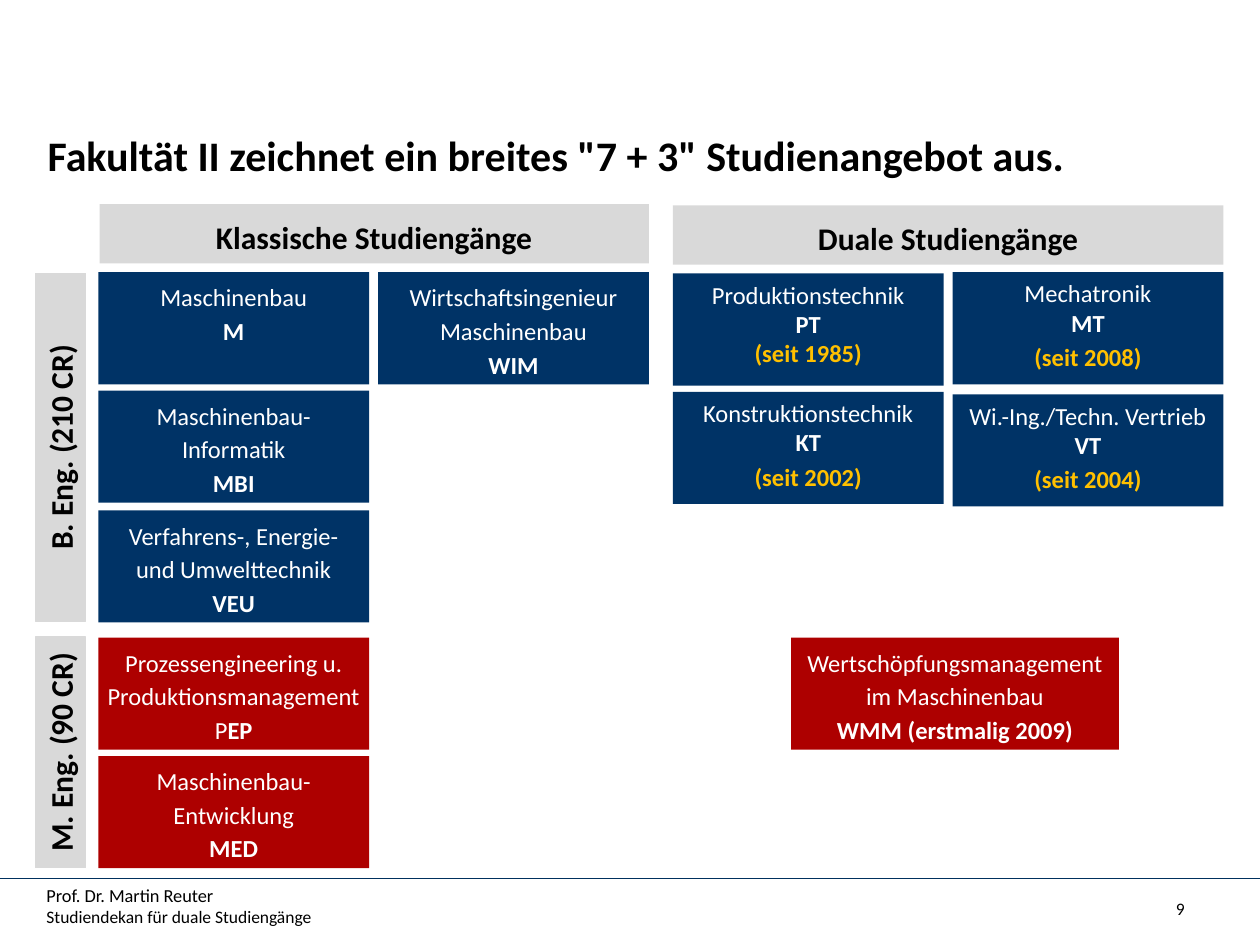
from lxml import etree
from pptx import Presentation
from pptx.dml.color import RGBColor
from pptx.enum.shapes import MSO_CONNECTOR, MSO_SHAPE
from pptx.enum.text import MSO_ANCHOR, PP_ALIGN
from pptx.oxml.ns import qn
from pptx.util import Inches, Pt

COLORS = {"bachelor": "003366", "master": "AD0000", "label": "D9D9D9", "rule": "00305D",
          "black": "000000", "white": "FFFFFF", "since": "FFC000"}
FONT = "Calibri"
COURSE_W, COURSE_H = 2.15, 0.89
COLUMNS = [0.78, 3.0, 5.34, 7.56]
WMM_LEFT, WMM_W = 6.28, 2.6
WIDE, SINGLE = 1.14, None  # line spacing of classic and dual courses

BOLD = {"bold": True}
SINCE = {"bold": True, "color": "since"}
TITLE = 'Fakultät II zeichnet ein breites "7 + 3" Studienangebot aus.'
# left, top, width, text
GROUP_HEADERS = [(0.79, 1.62, 4.36, "Klassische Studiengänge"),
                 (5.34, 1.63, 4.37, "Duale Studiengänge")]
# centre x, centre y, length, text
DEGREE_LABELS = [(0.48, 3.55, 2.76, "B. Eng. (210 CR)"),
                 (0.48, 5.97, 1.83, "M. Eng. (90 CR)")]
# column, top, paragraphs of (text, style) runs
CLASSIC_BACHELOR = [
    (0, 2.16, [[("Maschinenbau", {})], [("M", BOLD)]]),
    (1, 2.16, [[("Wirtschaftsingenieur", {})], [("Maschinenbau", {})], [("WIM", BOLD)]]),
    (0, 3.10, [[("Maschinenbau-\nInformatik\n", {}), ("MBI", BOLD)]]),
    (0, 4.05, [[("Verfahrens-, Energie-", {})],
               [("und Umwelttechnik\n", {}), ("VEU", BOLD)]]),
]
DUAL_BACHELOR = [
    (2, 2.17, [[("Produktionstechnik\n", {}), ("PT\n", BOLD), ("(seit 1985)", SINCE)]]),
    (3, 2.16, [[("Mechatronik\n", {}), ("MT", BOLD)], [("(seit 2008)", SINCE)]]),
    (2, 3.11, [[("Konstruktionstechnik\n", {}), ("KT", BOLD)], [("(seit 2002)", SINCE)]]),
    (3, 3.13, [[("Wi.-Ing./Techn. Vertrieb\n", {}), ("VT", BOLD)], [("(seit 2004)", SINCE)]]),
]
CLASSIC_MASTER = [
    (0, 5.06, [[("Prozessengineering u.", {})],
               [("Produktionsmanagement\nP", {}), ("EP", BOLD)]]),
    (0, 6.00, [[("Maschinenbau-", {})], [("Entwicklung\n", {}), ("MED", BOLD)]]),
]
WMM = [[("Wertschöpfungsmanagement\nim Maschinenbau\n", {}), ("WMM (erstmalig 2009)", BOLD)]]
FOOTER = [[("Prof. Dr. Martin Reuter\n", {"size": 10.5}),
           ("Studiendekan für duale Studiengänge", {})]]
PAGE_NUMBER = "9"


def write(frame, paragraphs, size, color="black", align=PP_ALIGN.CENTER,
          spacing=None, gap=0, wrap=True):
    """Fill a text frame; a newline in a run becomes a line break."""
    frame.word_wrap = wrap
    frame.vertical_anchor = MSO_ANCHOR.TOP
    for i, runs in enumerate(paragraphs):
        paragraph = frame.add_paragraph() if i else frame.paragraphs[0]
        paragraph.alignment = align
        if spacing:
            paragraph.line_spacing = spacing
        if i and gap:
            paragraph.space_before = Pt(gap)
        for text, style in runs:
            for n, line in enumerate(text.split("\n")):
                if n:
                    paragraph.add_line_break()
                if not line:
                    continue
                run = paragraph.add_run()
                run.text = line
                run.font.name = FONT
                run.font.size = Pt(style.get("size", size))
                run.font.bold = style.get("bold", False)
                run.font.color.rgb = RGBColor.from_string(COLORS[style.get("color", color)])


def add_box(slide, left, top, width, height, fill):
    box = slide.shapes.add_shape(MSO_SHAPE.RECTANGLE, Inches(left), Inches(top),
                                 Inches(width), Inches(height))
    box.shadow.inherit = False
    box.fill.solid()
    box.fill.fore_color.rgb = RGBColor.from_string(COLORS[fill])
    box.line.fill.background()
    return box


def add_text(slide, left, top, width, height, paragraphs, size, **options):
    box = slide.shapes.add_textbox(Inches(left), Inches(top), Inches(width), Inches(height))
    write(box.text_frame, paragraphs, size, **options)


def add_course(slide, left, top, width, fill, paragraphs, spacing):
    box = add_box(slide, left, top, width, COURSE_H, fill)
    gap = 0 if spacing else 2.8
    write(box.text_frame, paragraphs, 14, "white", spacing=spacing, gap=gap, wrap=False)


def add_degree_label(slide, center_x, center_y, length, text):
    height = 0.4
    label = add_box(slide, center_x - length / 2, center_y - height / 2, length, height, "label")
    label.rotation = 270
    label.line.color.rgb = RGBColor.from_string(COLORS["label"])
    label.line.width = Pt(0.75)
    write(label.text_frame, [[(text, BOLD)]], 18)


def add_footer(slide):
    rule = slide.shapes.add_connector(MSO_CONNECTOR.STRAIGHT, Inches(0), Inches(6.97),
                                      Inches(10), Inches(6.97))
    rule.line.color.rgb = RGBColor.from_string(COLORS["rule"])
    rule.line.width = Pt(0.75)
    etree.SubElement(rule._element.spPr, qn("a:effectLst"))
    add_text(slide, 0.27, 6.97, 6.69, 0.39, FOOTER, 10, align=PP_ALIGN.LEFT)
    add_text(slide, 7.67, 7.08, 1.83, 0.25, [[(PAGE_NUMBER, {})]], 10, align=PP_ALIGN.RIGHT)


def main():
    prs = Presentation()
    prs.slide_width, prs.slide_height = Inches(10), Inches(7.5)
    slide = prs.slides.add_slide(prs.slide_layouts[6])

    add_footer(slide)
    add_text(slide, 0.28, 0.9, 9.58, 0.59, [[(TITLE, BOLD)]], 24,
             align=PP_ALIGN.LEFT, spacing=1.2)
    for courses, fill, spacing in [(CLASSIC_BACHELOR, "bachelor", WIDE),
                                   (DUAL_BACHELOR, "bachelor", SINGLE),
                                   (CLASSIC_MASTER, "master", WIDE)]:
        for column, top, paragraphs in courses:
            add_course(slide, COLUMNS[column], top, COURSE_W, fill, paragraphs, spacing)
    add_course(slide, WMM_LEFT, 5.06, WMM_W, "master", WMM, WIDE)
    for left, top, width, text in GROUP_HEADERS:
        header = add_box(slide, left, top, width, 0.47, "label")
        write(header.text_frame, [[(text, BOLD)]], 18, spacing=1.2)
    for label in DEGREE_LABELS:
        add_degree_label(slide, *label)

    prs.save("out.pptx")


if __name__ == "__main__":
    main()
